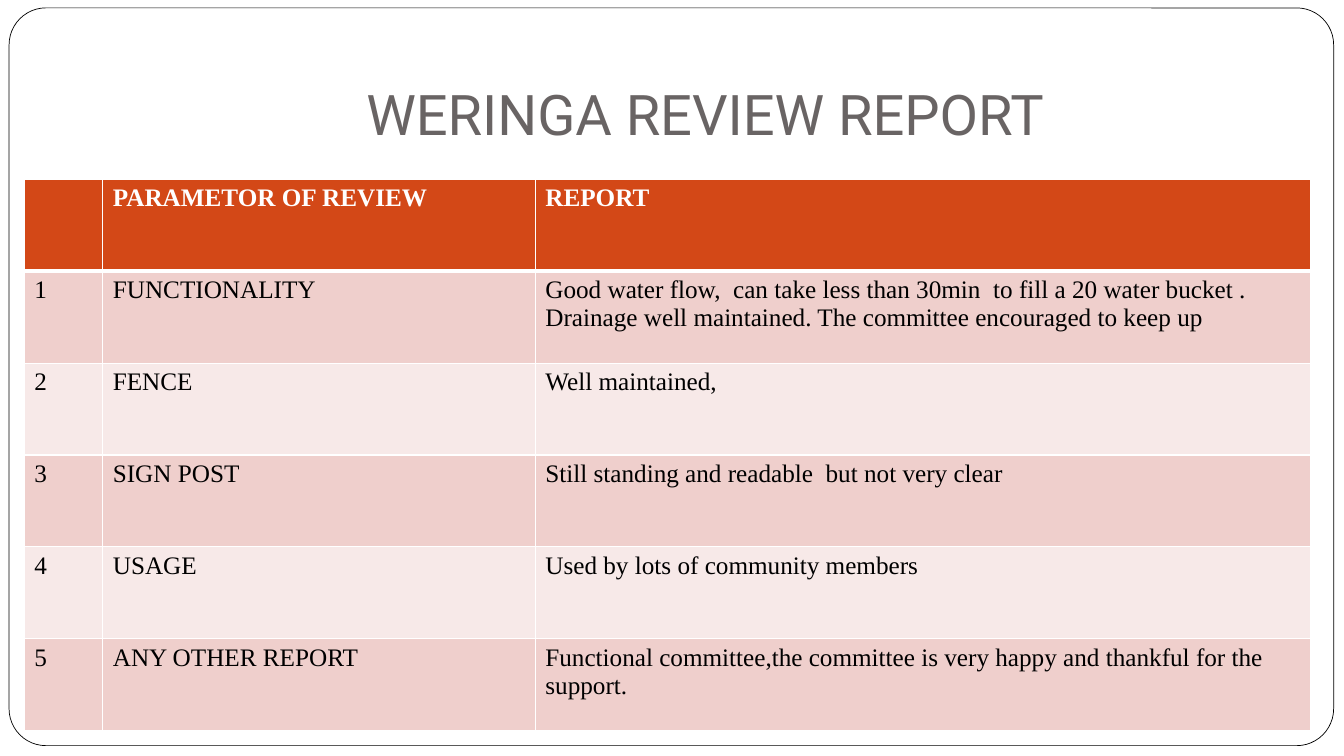
from pptx import Presentation
from pptx.dml.color import RGBColor
from pptx.enum.shapes import MSO_SHAPE as Shape
from pptx.enum.text import MSO_ANCHOR as Anchor, PP_ALIGN as Align
from pptx.oxml import parse_xml
from pptx.oxml.ns import nsdecls
from pptx.util import Cm, Pt

HEAD = ["", "PARAMETOR OF REVIEW", "REPORT"]
ITEMS = [
    ("FUNCTIONALITY",
     "Good water flow,  can take less than 30min  to fill a 20 water bucket . "
     "Drainage well maintained. The committee encouraged to keep up"),
    ("FENCE", "Well maintained,"),
    ("SIGN POST", "Still standing and readable  but not very clear"),
    ("USAGE", "Used by lots of community members"),
    ("ANY OTHER REPORT",
     "Functional committee,the committee is very happy and thankful "
     "for the support."),
]
BANDS = ["F7E9E8", "EFCFCC"]
COLS = [1.98, 10.9, 19.53]


def color(code):
    return RGBColor.from_string(code)


def write(frame, text, code, **style):
    run = frame.paragraphs[0].add_run()
    run.text = text
    run.font.color.rgb = color(code)
    for name, value in style.items():
        setattr(run.font, name, value)


def edge(cell, side, width):
    cell._tc.get_or_add_tcPr().append(parse_xml(
        f'<a:ln{side} {nsdecls("a")} w="{Pt(width)}"><a:solidFill>'
        f'<a:srgbClr val="FFFFFF"/></a:solidFill></a:ln{side}>'))


# Rounded outline around the page
def add_frame(slide, box):
    card = slide.shapes.add_shape(Shape.ROUNDED_RECTANGLE, *map(Cm, box))
    card.adjustments[0] = 0.05
    card.shadow.inherit = False
    card.fill.solid()
    card.fill.fore_color.rgb = color("FFFFFF")
    card.line.color.rgb = color("000000")
    card.line.width = Pt(0.5)


# Heading, resting on the bottom of its box
def add_title(slide, box):
    frame = slide.shapes.add_textbox(*map(Cm, box)).text_frame
    layout = {"word_wrap": True, "vertical_anchor": Anchor.BOTTOM,
              "margin_bottom": Cm(0.25)}
    for name, value in layout.items():
        setattr(frame, name, value)
    frame.paragraphs[0].alignment = Align.CENTER
    write(frame, "WERINGA REVIEW REPORT", "696464", name="Roboto", size=Pt(40))


# Review table: header row, then numbered rows in two tints
def add_review(slide, box):
    rows = [HEAD] + [(str(n), *item) for n, item in enumerate(ITEMS, 1)]
    table = slide.shapes.add_table(len(rows), len(HEAD), *map(Cm, box)).table
    for col, width in zip(table.columns, COLS):
        col.width = Cm(width)
    for r, row in enumerate(rows):
        table.rows[r].height = Cm(box[3] / len(rows))
        head = r == 0
        for c, text in enumerate(row):
            cell = table.cell(r, c)
            widths = {"L": 1, "R": 1, "T": 3 if r == 1 else 1,
                      "B": 3 if head else 1}
            for side, width in widths.items():
                edge(cell, side, width)
            cell.fill.solid()
            cell.fill.fore_color.rgb = color("D34817" if head else BANDS[r % 2])
            if text:
                write(cell.text_frame, text, "FFFFFF" if head else "000000",
                      name="Times New Roman", size=Pt(18), bold=head)


def main():
    deck = Presentation()
    deck.slide_width, deck.slide_height = Cm(33.87), Cm(19.05)
    slide = deck.slides.add_slide(deck.slide_layouts[6])
    add_frame(slide, (0.23, 0.2, 33.38, 18.59))
    add_title(slide, (3.38, 0.76, 28.78, 3.18))
    add_review(slide, (0.61, 4.52, 32.41, 13.89))
    deck.save("out.pptx")


if __name__ == "__main__":
    main()
